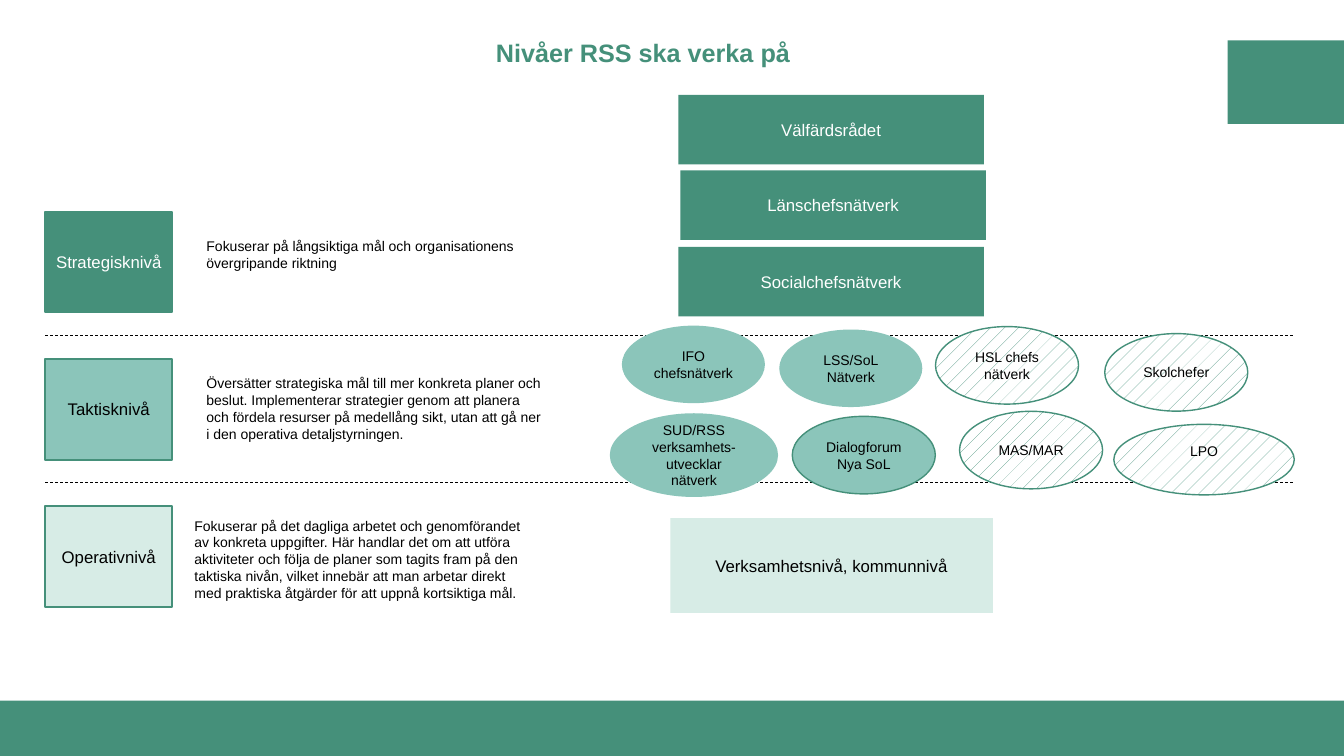
from lxml.etree import SubElement
from pptx import Presentation
from pptx.dml.color import RGBColor
from pptx.enum.dml import MSO_LINE, MSO_PATTERN
from pptx.enum.shapes import MSO_CONNECTOR, MSO_SHAPE
from pptx.enum.text import MSO_ANCHOR, MSO_AUTO_SIZE, PP_ALIGN
from pptx.oxml.ns import qn
from pptx.util import Pt

GREEN = RGBColor(0x45, 0x90, 0x7A)
MINT = RGBColor(0x8B, 0xC5, 0xBA)
PALE = RGBColor(0xD7, 0xEC, 0xE6)
WHITE = RGBColor(0xFF, 0xFF, 0xFF)
BLACK = RGBColor(0, 0, 0)
HATCHED = None


class LevelSlide:
    font_name = "Arial"

    def __init__(self, deck):
        self.slide = deck.slides.add_slide(deck.slide_layouts[5])
        self.shapes = self.slide.shapes

    def fill_text(self, frame, text, size, color, align, bold=False, **frame_format):
        for key, value in frame_format.items():
            setattr(frame, key, value)
        frame.text = text
        font_format = {"name": self.font_name, "size": Pt(size), "bold": bold}
        for paragraph in frame.paragraphs:
            paragraph.alignment = align
            for key, value in font_format.items():
                setattr(paragraph.font, key, value)
            paragraph.font.color.rgb = color

    def place(self, shape, box):
        for key, value in zip(("left", "top", "width", "height"), box):
            setattr(shape, key, Pt(value))

    def title(self, text, box):
        heading = self.shapes.title
        self.place(heading, box)
        self.fill_text(heading.text_frame, text, 18, GREEN, PP_ALIGN.LEFT, bold=True,
                       word_wrap=False, auto_size=MSO_AUTO_SIZE.NONE,
                       vertical_anchor=MSO_ANCHOR.TOP)

    def shape(self, kind, box, fill, outline=0, text="", size=12, color=BLACK, **insets):
        item = self.shapes.add_shape(kind, *map(Pt, box))
        item.shadow.inherit = False
        if fill is HATCHED:
            item.fill.patterned()
            item.fill.pattern = MSO_PATTERN.PERCENT_5
            item.fill.fore_color.rgb = GREEN
            item.fill.back_color.rgb = WHITE
        else:
            item.fill.solid()
            item.fill.fore_color.rgb = fill
        if outline:
            item.line.color.rgb = GREEN
            item.line.width = Pt(outline)
        else:
            item.line.fill.background()
        if text:
            self.fill_text(item.text_frame, text, size, color, PP_ALIGN.CENTER,
                           word_wrap=True, vertical_anchor=MSO_ANCHOR.MIDDLE, **insets)

    def box(self, box, fill, **details):
        self.shape(MSO_SHAPE.RECTANGLE, box, fill, **details)

    def oval(self, box, fill, **details):
        self.shape(MSO_SHAPE.OVAL, box, fill, size=10, **details)

    def description(self, text, box):
        note = self.shapes.add_textbox(*map(Pt, box))
        self.fill_text(note.text_frame, text, 10, BLACK, PP_ALIGN.LEFT, word_wrap=True,
                       auto_size=MSO_AUTO_SIZE.SHAPE_TO_FIT_TEXT)

    def divider(self, left, right, y):
        line = self.shapes.add_connector(MSO_CONNECTOR.STRAIGHT,
                                         Pt(left), Pt(y), Pt(right), Pt(y))
        line.line.color.rgb = BLACK
        line_format = {"width": Pt(0.5), "dash_style": MSO_LINE.DASH}
        for key, value in line_format.items():
            setattr(line.line, key, value)
        SubElement(line._element.spPr, qn("a:effectLst"))


LEVEL_STEP = 105.1
LEVELS = [
    ("Strategisknivå", GREEN, WHITE, (140.4, 166.3, 257.8, 31.7),
     "Fokuserar på långsiktiga mål och organisationens övergripande riktning"),
    ("Taktisknivå", MINT, BLACK, (140.4, 264.2, 255.6, 55.4),
     "Översätter strategiska mål till mer konkreta planer och beslut. Implementerar "
     "strategier genom att planera och fördela resurser på medellång sikt, utan att "
     "gå ner i den operativa detaljstyrningen."),
    ("Operativnivå", PALE, BLACK, (131.8, 365.8, 257.8, 67.7),
     "Fokuserar på det dagliga arbetet och genomförandet av konkreta uppgifter. Här "
     "handlar det om att utföra aktiviteter och följa de planer som tagits fram på den "
     "taktiska nivån, vilket innebär att man arbetar direkt med praktiska åtgärder för "
     "att uppnå kortsiktiga mål."),
]
COUNCILS = [
    ("Välfärdsrådet", 484.6, 67.7),
    ("Länschefsnätverk", 486, 121.7),
    ("Socialchefsnätverk", 484.6, 176.4),
]
USUAL = (102.2, 55.4)
NETWORKS = [
    ("IFO chefsnätverk", (444.2, 232.6), USUAL, MINT, 0),
    ("HSL chefs\nnätverk", (668.2, 233.3), USUAL, HATCHED, 1),
    ("LSS/SoL\vNätverk", (556.6, 235.4), USUAL, MINT, 0),
    ("SUD/RSS verksamhets-utvecklar nätverk", (435.6, 295.2), (120.2, 59.8), MINT, 0),
    ("Dialogforum Nya SoL", (565.9, 297.4), USUAL, MINT, 1),
    ("MAS/MAR", (685.4, 293.8), USUAL, HATCHED, 1),
    ("Skolchefer", (789.1, 238.3), USUAL, HATCHED, 1),
]


def main():
    deck = Presentation()
    deck.slide_width, deck.slide_height = Pt(960), Pt(540)
    page = LevelSlide(deck)
    page.title("Nivåer RSS ska verka på", (347, 23, 231.8, 28.8))
    page.box((876.8, 28.8, 83.2, 59.8), GREEN)
    page.box((0, 500.4, 960, 39.6), GREEN)

    for step in range(len(LEVELS) - 1):
        page.divider(32.4, 925.2, 239.8 + step * LEVEL_STEP)
    for step, (level, fill, color, note_box, note) in enumerate(LEVELS):
        page.box((32.4, 151.2 + step * LEVEL_STEP, 90.7, 72), fill, outline=1.5,
                 text=level, color=color, margin_left=Pt(4), margin_right=Pt(4))
        page.description(note, note_box)

    for council, left, top in COUNCILS:
        page.box((left, top, 218.2, 49.7), GREEN, text=council, color=WHITE)
    page.box((478.8, 370.1, 230.4, 67.7), PALE, text="Verksamhetsnivå, kommunnivå")

    for network, corner, size, fill, outline in NETWORKS:
        page.oval(corner + size, fill, outline=outline, text=network)
    page.oval((795.6, 303.1, 128.9, 50.4), HATCHED, outline=1, text="LPO",
              margin_bottom=Pt(15.6))

    deck.save("out.pptx")


if __name__ == "__main__":
    main()
